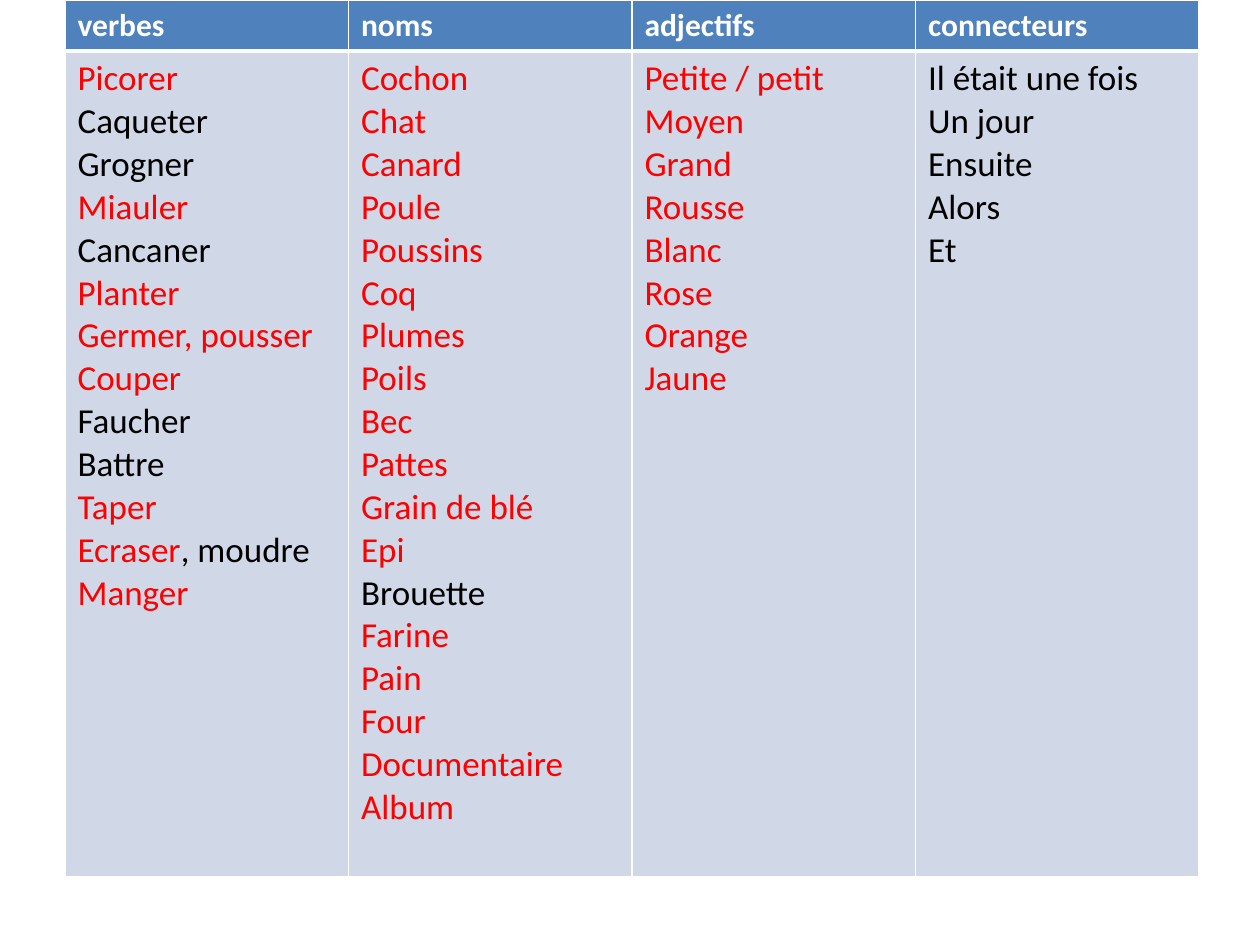
from lxml import etree
from pptx import Presentation
from pptx import util as u
from pptx.dml.color import RGBColor
from pptx.oxml.ns import qn

WHITE, BLACK, RED = "FFFFFF", "000000", "FF0000"
WORDS = {
    "verbes": ["Picorer", "Caqueter", "Grogner", "Miauler", "Cancaner",
               "Planter", "Germer, pousser", "Couper", "Faucher", "Battre",
               "Taper", "Ecraser|, moudre", "Manger"],
    "noms": ["Cochon", "Chat", "Canard", "Poule", "Poussins", "Coq",
             "Plumes", "Poils", "Bec", "Pattes", "Grain de blé", "Epi",
             "Brouette", "Farine", "Pain", "Four", "Documentaire", "Album"],
    "adjectifs": ["Petite / petit", "Moyen", "Grand", "Rousse", "Blanc",
                  "Rose", "Orange", "Jaune"],
    "connecteurs": ["Il était une fois", "Un jour", "Ensuite", "Alors", "Et"],
}
DARK = {"Caqueter", "Grogner", "Cancaner", "Faucher", "Battre", ", moudre",
        "Brouette", *WORDS["connecteurs"]}
HEAD = {"fill": "4F81BD", "edges": {"L": 1, "R": 1, "T": 1, "B": 3},
        "font": {"name": "Calibri", "size": u.Pt(18), "bold": True}}
BODY = {"fill": "D0D8E8", "edges": {"L": 1, "R": 1, "T": 3, "B": 1},
        "font": {"name": "Calibri", "size": u.Pt(20), "bold": False}}
LEFT, TOP, WIDTH = 65, 0, 1134
ROWS = [51, 826]


def px(n):
    return u.Emu(round(n * 914400 / 126))


def rgb(code):
    return RGBColor.from_string(code)


def edge(cell, side, width):
    props = cell._tc.get_or_add_tcPr()
    line = etree.SubElement(props, qn("a:ln" + side), w=str(u.Pt(width)))
    fill = etree.SubElement(line, qn("a:solidFill"))
    etree.SubElement(fill, qn("a:srgbClr"), val=WHITE)


def write(cell, lines, look, pick):
    for side, width in look["edges"].items():
        edge(cell, side, width)
    cell.fill.solid()
    cell.fill.fore_color.rgb = rgb(look["fill"])
    frame = cell.text_frame
    for i, line in enumerate(lines):
        para = frame.add_paragraph() if i else frame.paragraphs[0]
        for part in line.split("|"):
            run = para.add_run()
            run.text = part
            for key, value in look["font"].items():
                setattr(run.font, key, value)
            run.font.color.rgb = rgb(pick(part))


def main():
    deck = Presentation()
    deck.slide_width, deck.slide_height = px(1260), px(945)
    slide = deck.slides.add_slide(deck.slide_layouts[6])
    table = slide.shapes.add_table(
        len(ROWS), len(WORDS), px(LEFT), px(TOP), px(WIDTH), px(sum(ROWS))).table
    for row, height in zip(table.rows, ROWS):
        row.height = px(height)
    for col, (title, lines) in enumerate(WORDS.items()):
        table.columns[col].width = px(WIDTH / len(WORDS))
        write(table.cell(0, col), [title], HEAD, lambda part: WHITE)
        write(table.cell(1, col), lines, BODY,
              lambda part: BLACK if part in DARK else RED)
    deck.save("out.pptx")


if __name__ == "__main__":
    main()
